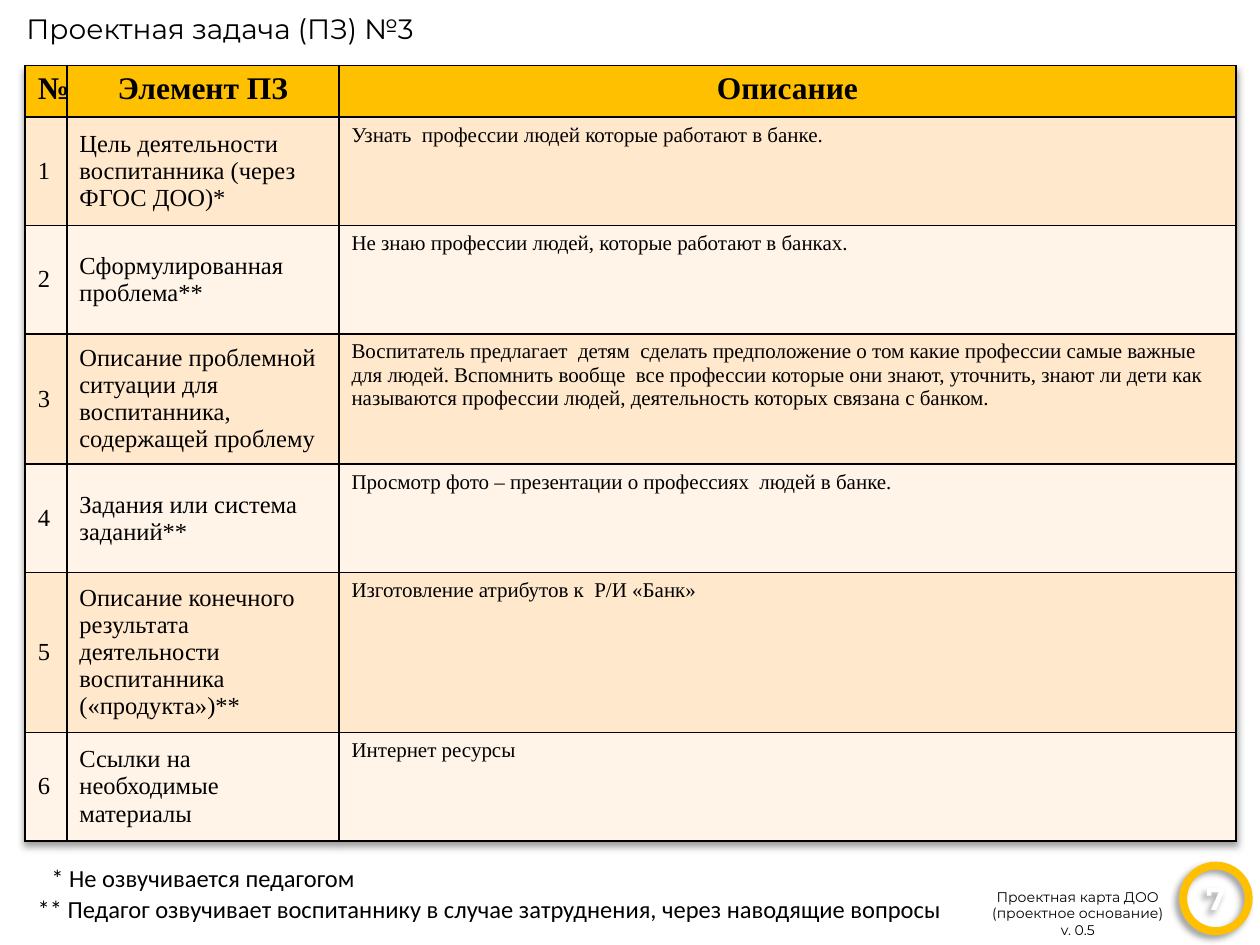
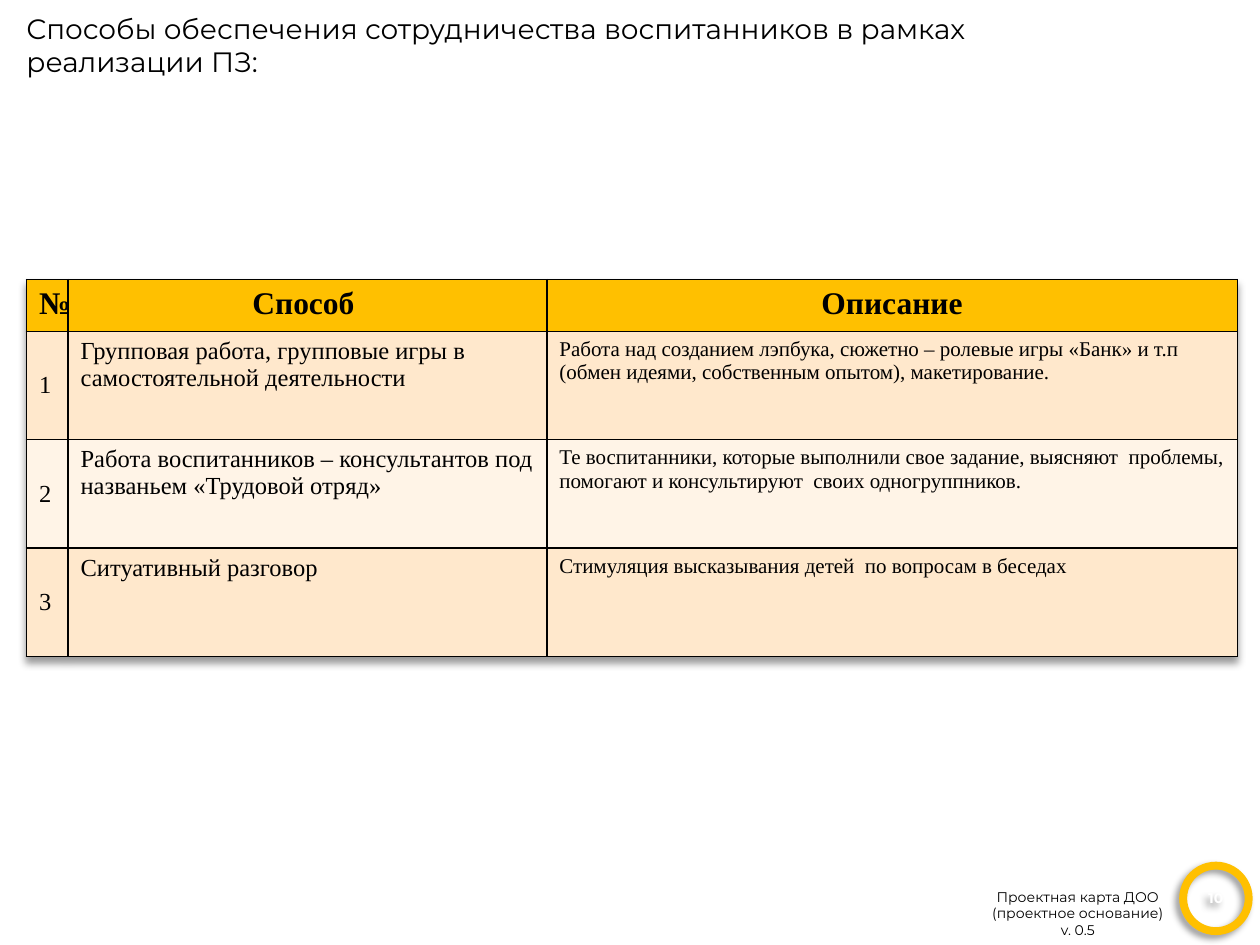
from dataclasses import dataclass
from typing import Any, Optional

from pptx import Presentation
from pptx import util as u
from pptx.dml import color as dml
from pptx.enum import shapes, text
from pptx.oxml import parse_xml
from pptx.oxml import ns

PX_PER_INCH = 100
EMU_PER_PX = 914400 // PX_PER_INCH
LEFT, CENTER = text.PP_ALIGN.LEFT, text.PP_ALIGN.CENTER
TOP, MIDDLE = text.MSO_ANCHOR.TOP, text.MSO_ANCHOR.MIDDLE


@dataclass(frozen=True)
class Theme:
    ink: str = "000000"
    paper: str = "FFFFFF"
    accent: str = "FFC000"
    bands: tuple[str, str] = ("FFE8CC", "FFF4E7")
    display_font: str = "Montserrat"
    table_font: str = "Times New Roman"
    note_font: str = "Calibri"
    title_size: int = 16
    footer_size: int = 8
    header_size: int = 18
    item_size: int = 14
    detail_size: int = 12
    note_size: int = 14
    border: int = 1
    ring: float = 4.5


@dataclass(frozen=True)
class Area:
    left: int
    top: int
    width: int
    height: int

    def emu(self) -> tuple[u.Emu, u.Emu, u.Emu, u.Emu]:
        return px(self.left), px(self.top), px(self.width), px(self.height)


@dataclass(frozen=True)
class Row:
    item: str
    detail: str
    height: int = 86


@dataclass(frozen=True)
class Note:
    wording: str
    area: Area


@dataclass(frozen=True)
class TaskPage:
    title: str
    title_height: int
    number: str
    number_size: int
    left: int
    top: int
    columns: tuple[int, int, int]
    header: tuple[str, str, str]
    item_anchor: Any
    rows: tuple[Row, ...]
    notes: tuple[Note, ...] = ()


THEME = Theme()
HEADER_HEIGHT = 41
FOOTER_AREA = Area(772, 700, 167, 50)
FOOTER = "Проектная карта ДОО\n(проектное основание)\nv. 0.5"
BADGE_AREA = Area(939, 687, 52, 52)

PAGES = (
    TaskPage(
        title="Проектная задача (ПЗ) №3",
        title_height=37,
        number="7",
        number_size=18,
        left=20,
        top=52,
        columns=(33, 216, 712),
        header=("№", "Элемент ПЗ", "Описание"),
        item_anchor=MIDDLE,
        rows=(
            Row("Цель деятельности воспитанника (через ФГОС ДОО)*",
                "Узнать  профессии людей которые работают в банке."),
            Row("Сформулированная проблема**",
                "Не знаю профессии людей, которые работают в банках."),
            Row("Описание проблемной ситуации для воспитанника, содержащей проблему",
                "Воспитатель предлагает  детям  сделать предположение о том какие "
                "профессии самые важные для людей. Вспомнить вообще  все профессии "
                "которые они знают, уточнить, знают ли дети как называются профессии "
                "людей, деятельность которых связана с банком.", 103),
            Row("Задания или система заданий**",
                "Просмотр фото – презентации о профессиях  людей в банке."),
            Row("Описание конечного результата деятельности воспитанника («продукта»)**",
                "Изготовление атрибутов к  Р/И «Банк»", 127),
            Row("Ссылки на необходимые материалы", "Интернет ресурсы"),
        ),
        notes=(
            Note("** Педагог озвучивает воспитаннику в случае затруднения, "
                 "через наводящие вопросы", Area(20, 705, 749, 34)),
            Note("* Не озвучивается педагогом", Area(31, 680, 268, 34)),
        ),
    ),
    TaskPage(
        title="Способы обеспечения сотрудничества воспитанников в рамках реализации ПЗ:",
        title_height=64,
        number="10",
        number_size=8,
        left=21,
        top=222,
        columns=(33, 380, 548),
        header=("№", "Способ ", "Описание"),
        item_anchor=TOP,
        rows=(
            Row("Групповая работа, групповые игры в самостоятельной деятельности",
                "Работа над созданием лэпбука, сюжетно – ролевые игры «Банк» и т.п "
                "(обмен идеями, собственным опытом), макетирование."),
            Row("Работа воспитанников – консультантов под названьем «Трудовой отряд»",
                "Те воспитанники, которые выполнили свое задание, выясняют  проблемы, "
                "помогают и консультируют  своих одногруппников."),
            Row("Ситуативный разговор",
                "Стимуляция высказывания детей  по вопросам в беседах"),
        ),
    ),
)


def px(length: int) -> u.Emu:
    return u.Emu(length * EMU_PER_PX)


def rgb(code: str) -> dml.RGBColor:
    return dml.RGBColor.from_string(code)


def write(frame: Any, wording: str, *, size: int, font: str, color: str = THEME.ink,
          bold: bool = False, align: Any = LEFT) -> None:
    for index, line in enumerate(wording.split("\n")):
        para = frame.add_paragraph() if index else frame.paragraphs[0]
        para.alignment = align
        span = para.add_run()
        span.text = line
        span.font.size = u.Pt(size)
        span.font.name = font
        span.font.bold = bold
        span.font.color.rgb = rgb(color)


def add_shadow(effects: Any, direction: int) -> None:
    effects.append(parse_xml(
        f'<a:outerShdw {ns.nsdecls("a")} blurRad="{u.Pt(4)}" dist="{u.Pt(3)}" '
        f'dir="{direction * 60000}" algn="tl" rotWithShape="0">'
        f'<a:srgbClr val="{THEME.ink}"><a:alpha val="40000"/></a:srgbClr></a:outerShdw>'))


def add_title(page: Any, wording: str, height: int) -> None:
    box = page.shapes.title
    box.left, box.top, box.width, box.height = Area(11, 4, 822, height).emu()
    frame = box.text_frame
    frame.auto_size = text.MSO_AUTO_SIZE.NONE
    frame.vertical_anchor = TOP
    write(frame, wording, size=THEME.title_size, font=THEME.display_font)


def add_label(page: Any, area: Area, wording: str, *, size: int, font: str,
              align: Any = LEFT) -> None:
    frame = page.shapes.add_textbox(*area.emu()).text_frame
    frame.word_wrap = False
    frame.auto_size = text.MSO_AUTO_SIZE.SHAPE_TO_FIT_TEXT
    write(frame, wording, size=size, font=font, align=align)


def add_badge(page: Any, number: str, size: int) -> None:
    ring = page.shapes.add_shape(shapes.MSO_SHAPE.OVAL, *BADGE_AREA.emu())
    ring.fill.background()
    ring.line.color.rgb = rgb(THEME.accent)
    ring.line.width = u.Pt(THEME.ring)
    ring.shadow.inherit = False
    add_shadow(ring.element.spPr.find(ns.qn("a:effectLst")), 135)
    ring.text_frame.vertical_anchor = MIDDLE
    write(ring.text_frame, number, size=size, font=THEME.display_font,
          color=THEME.paper, bold=True, align=CENTER)


def fill_cell(cell: Any, wording: str, fill: str, *, size: int, anchor: Any = TOP,
              bold: bool = False, align: Optional[Any] = LEFT) -> None:
    cell.fill.solid()
    cell.fill.fore_color.rgb = rgb(fill)
    cell.vertical_anchor = anchor
    write(cell.text_frame, wording, size=size, font=THEME.table_font,
          bold=bold, align=align)
    properties = cell.text_frame._txBody.getparent().find(ns.qn("a:tcPr"))
    for index, side in enumerate("LRTB"):
        properties.insert(index, parse_xml(
            f'<a:ln{side} {ns.nsdecls("a")} w="{u.Pt(THEME.border)}"><a:solidFill>'
            f'<a:srgbClr val="{THEME.ink}"/></a:solidFill></a:ln{side}>'))


def add_task_table(page: Any, task: TaskPage) -> None:
    heights = [HEADER_HEIGHT, *(row.height for row in task.rows)]
    area = Area(task.left, task.top, sum(task.columns), sum(heights))
    holder = page.shapes.add_table(len(heights), len(task.columns), *area.emu())
    table = holder.table
    table.horz_banding = False
    for column, width in zip(table.columns, task.columns):
        column.width = px(width)
    for line, height in zip(table.rows, heights):
        line.height = px(height)

    for column, heading in enumerate(task.header):
        fill_cell(table.cell(0, column), heading, THEME.accent,
                  size=THEME.header_size, bold=True, align=CENTER)
    for number, row in enumerate(task.rows, start=1):
        band = THEME.bands[(number - 1) % 2]
        fill_cell(table.cell(number, 0), str(number), band,
                  size=THEME.item_size, anchor=MIDDLE)
        fill_cell(table.cell(number, 1), row.item, band,
                  size=THEME.item_size, anchor=task.item_anchor)
        fill_cell(table.cell(number, 2), row.detail, band, size=THEME.detail_size)

    effects = parse_xml(f'<a:effectLst {ns.nsdecls("a")}/>')
    add_shadow(effects, 90)
    holder.element.find(f'.//{ns.qn("a:tblPr")}').insert(0, effects)


def add_task_page(deck: Any, task: TaskPage) -> None:
    page = deck.slides.add_slide(deck.slide_layouts.get_by_name("Title Only"))
    add_title(page, task.title, task.title_height)
    add_label(page, FOOTER_AREA, FOOTER, size=THEME.footer_size,
              font=THEME.display_font, align=CENTER)
    add_badge(page, task.number, task.number_size)
    add_task_table(page, task)
    for note in task.notes:
        add_label(page, note.area, note.wording, size=THEME.note_size,
                  font=THEME.note_font)


def main() -> None:
    deck = Presentation()
    deck.slide_width, deck.slide_height = px(1000), px(750)
    for task in PAGES:
        add_task_page(deck, task)
    deck.save("out.pptx")


if __name__ == "__main__":
    main()
